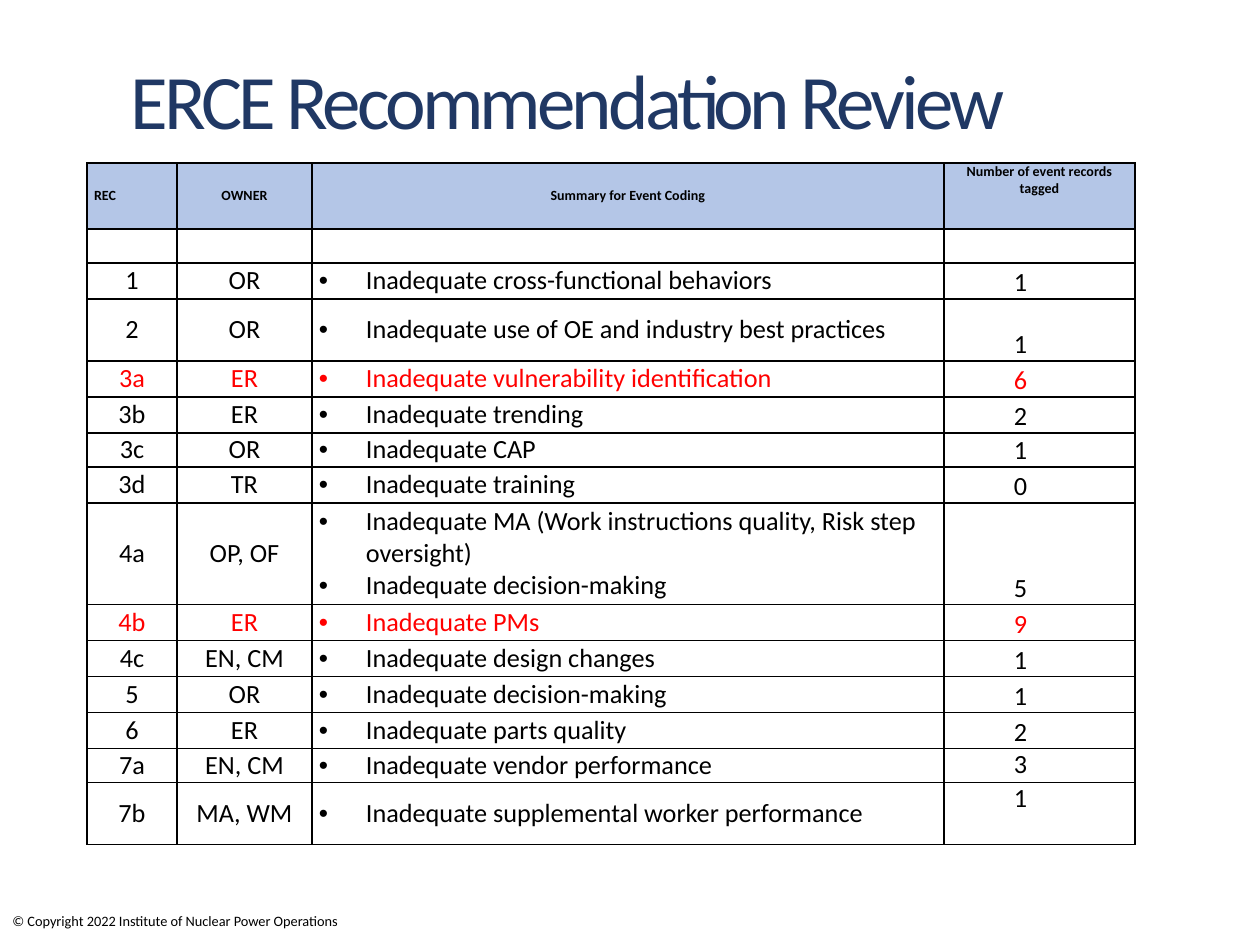
from lxml import etree
from pptx import Presentation
from pptx.dml.color import RGBColor
from pptx.enum.text import MSO_ANCHOR, MSO_AUTO_SIZE, PP_ALIGN
from pptx.oxml.ns import qn
from pptx.util import Emu, Pt

LEFT, CENTER = PP_ALIGN.LEFT, PP_ALIGN.CENTER
TOP, MIDDLE, BOTTOM = MSO_ANCHOR.TOP, MSO_ANCHOR.MIDDLE, MSO_ANCHOR.BOTTOM
NO_AUTOFIT, GROW = MSO_AUTO_SIZE.NONE, MSO_AUTO_SIZE.SHAPE_TO_FIT_TEXT

EMU_PER_PX = 914400 / 126
FONT = "Calibri"
COLORS = {"text": "000000", "alert": "FF0000", "title": "203864", "header": "B4C6E7"}

COLUMN_WIDTHS = [90, 135, 632, 191]
HEADER_HEIGHT, BLANK_HEIGHT = 66, 34
HEADERS = [
    ("REC", LEFT, MIDDLE),
    ("OWNER", CENTER, MIDDLE),
    ("Summary for Event Coding", CENTER, MIDDLE),
    ("Number of event records tagged", CENTER, TOP),
]
# height, recommendation, owner, summary points, record count, count anchor, color
RECOMMENDATIONS = [
    (36, "1", "OR", ["Inadequate cross-functional behaviors"], "1", BOTTOM, "text"),
    (62, "2", "OR", ["Inadequate use of OE and industry best practices"], "1", BOTTOM, "text"),
    (36, "3a", "ER", ["Inadequate vulnerability identification"], "6", BOTTOM, "alert"),
    (36, "3b", "ER", ["Inadequate trending"], "2", BOTTOM, "text"),
    (34, "3c", "OR", ["Inadequate CAP"], "1", BOTTOM, "text"),
    (36, "3d", "TR", ["Inadequate training"], "0", BOTTOM, "text"),
    (102, "4a", "OP, OF", ["Inadequate MA (Work instructions quality, Risk step oversight)",
                           "Inadequate decision-making"], "5", BOTTOM, "text"),
    (36, "4b", "ER", ["Inadequate PMs"], "9", BOTTOM, "alert"),
    (36, "4c", "EN, CM", ["Inadequate design changes"], "1", BOTTOM, "text"),
    (36, "5", "OR", ["Inadequate decision-making"], "1", BOTTOM, "text"),
    (36, "6", "ER", ["Inadequate parts quality"], "2", BOTTOM, "text"),
    (34, "7a", "EN, CM", ["Inadequate vendor performance"], "3", TOP, "text"),
    (62, "7b", "MA, WM", ["Inadequate supplemental worker performance"], "1", TOP, "text"),
]


def px(length):
    return Emu(round(length * EMU_PER_PX))


def add_span(para, text, size, color="text", bold=False):
    span = para.add_run()
    span.text = text
    span.font.name = FONT
    span.font.size = Pt(size)
    span.font.bold = bold
    span.font.color.rgb = RGBColor.from_string(COLORS[color])
    return span


def indent(para, margin, bullet=False):
    """Set the left margin, with a hanging bullet if asked for."""
    properties = para._p.get_or_add_pPr()
    properties.set("marL", str(px(margin)))
    properties.set("indent", str(px(-margin if bullet else 0)))
    if bullet:
        etree.SubElement(properties, qn("a:buFont"), typeface="Arial")
        etree.SubElement(properties, qn("a:buChar"), char="•")


def add_title(page, text):
    title = page.shapes.title
    title.left, title.top, title.width, title.height = px(118), px(71), px(1086), px(68)
    frame = title.text_frame
    frame.auto_size = NO_AUTOFIT
    frame.vertical_anchor = MIDDLE
    para = frame.paragraphs[0]
    para.alignment = LEFT
    para.line_spacing = 0.9
    span = add_span(para, text, 44, "title")
    span.font._element.set("spc", "-220")


def add_copyright(page, text):
    box = page.shapes.add_textbox(px(0), px(906), px(364), px(30))
    frame = box.text_frame
    frame.word_wrap = True
    frame.auto_size = GROW
    frame.vertical_anchor = MIDDLE
    add_span(frame.paragraphs[0], text, 8.2)


def format_cell(cell, fill=None):
    """Give a cell its insets, thin border and fill."""
    cell.margin_left = cell.margin_right = px(7)
    cell.margin_top = cell.margin_bottom = 0
    properties = cell._tc.get_or_add_tcPr()
    for side in ("lnL", "lnR", "lnT", "lnB"):
        line = etree.SubElement(properties, qn(f"a:{side}"), w=str(Pt(1)))
        solid = etree.SubElement(line, qn("a:solidFill"))
        etree.SubElement(solid, qn("a:srgbClr"), val=COLORS["text"])
    if fill:
        cell.fill.solid()
        cell.fill.fore_color.rgb = RGBColor.from_string(COLORS[fill])
    else:
        cell.fill.background()


def write_cell(cell, text, size, align=LEFT, anchor=MIDDLE, color="text", bold=False):
    cell.vertical_anchor = anchor
    para = cell.text_frame.paragraphs[0]
    para.alignment = align
    add_span(para, text, size, color, bold)
    return para


def write_points(cell, points, color):
    cell.vertical_anchor = MIDDLE
    frame = cell.text_frame
    for number, point in enumerate(points):
        para = frame.add_paragraph() if number else frame.paragraphs[0]
        indent(para, 47, bullet=True)
        add_span(para, point, 15, color)


def add_review_table(page):
    heights = [HEADER_HEIGHT, BLANK_HEIGHT] + [entry[0] for entry in RECOMMENDATIONS]
    table = page.shapes.add_table(len(heights), len(COLUMN_WIDTHS), px(87), px(163),
                                  px(sum(COLUMN_WIDTHS)), px(sum(heights))).table
    table.first_row = table.horz_banding = False
    for column, width in zip(table.columns, COLUMN_WIDTHS):
        column.width = px(width)
    for number, (row, height) in enumerate(zip(table.rows, heights)):
        row.height = px(height)
        for cell in row.cells:
            format_cell(cell, None if number else "header")

    for cell, (text, align, anchor) in zip(table.rows[0].cells, HEADERS):
        write_cell(cell, text, 8, align, anchor, bold=True)
    for cell in table.rows[1].cells:
        cell.text_frame.paragraphs[0]._p.get_or_add_endParaRPr().set("sz", "800")
    for number, entry in enumerate(RECOMMENDATIONS, start=2):
        _, recommendation, owner, points, count, count_anchor, color = entry
        cells = list(table.rows[number].cells)
        write_cell(cells[0], recommendation, 15, CENTER, color=color)
        write_cell(cells[1], owner, 15, CENTER, color=color)
        write_points(cells[2], points, color)
        indent(write_cell(cells[3], count, 15, anchor=count_anchor, color=color), 63)


def main():
    deck = Presentation()
    deck.slide_width, deck.slide_height = px(1260), px(945)
    page = deck.slides.add_slide(deck.slide_layouts[5])
    add_copyright(page, "© Copyright 2022 Institute of Nuclear Power Operations")
    add_title(page, "ERCE Recommendation Review")
    add_review_table(page)
    deck.save("out.pptx")


if __name__ == "__main__":
    main()
